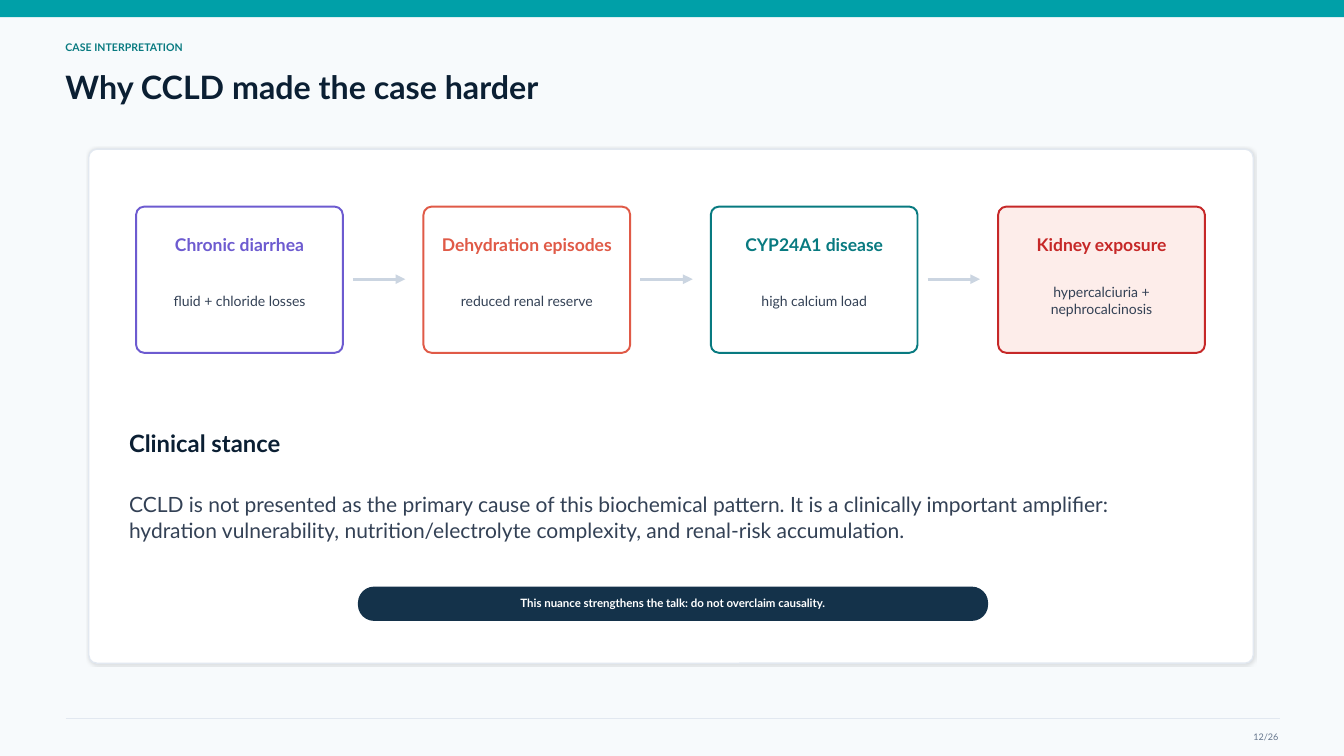
from dataclasses import dataclass

from lxml import etree
from pptx import Presentation
from pptx.dml.color import RGBColor
from pptx.enum.shapes import MSO_CONNECTOR, MSO_SHAPE
from pptx.enum.text import MSO_ANCHOR, PP_ALIGN
from pptx.oxml.ns import qn
from pptx.util import Emu, Pt

RECTANGLE = MSO_SHAPE.RECTANGLE
ROUNDED = MSO_SHAPE.ROUNDED_RECTANGLE
STRAIGHT = MSO_CONNECTOR.STRAIGHT
MIDDLE = MSO_ANCHOR.MIDDLE
LEFT, CENTER, RIGHT = PP_ALIGN.LEFT, PP_ALIGN.CENTER, PP_ALIGN.RIGHT
EMU_PER_PX = 9144  # 100 px to the inch


@dataclass(frozen=True)
class Theme:
    font: str = "Lato"
    # Colours
    background: str = "F7FAFC"
    bar: str = "00A0A8"
    teal: str = "087A80"
    ink: str = "0B1F33"
    body: str = "334155"
    muted: str = "64748B"
    rule: str = "E2E8F0"
    arrow: str = "CBD5E1"
    white: str = "FFFFFF"
    purple: str = "6D5BD0"
    coral: str = "E05A47"
    red: str = "C62828"
    blush: str = "FDEDEA"
    navy: str = "14324A"
    shadow: str = "000000"
    # Type sizes in points
    page_size: float = 6.5
    kicker_size: float = 7.5
    pill_size: float = 8.2
    detail_size: float = 10
    step_size: float = 12.5
    body_size: float = 15
    heading_size: float = 17
    title_size: float = 23


def px(value):
    return Emu(value * EMU_PER_PX)


def rgb(color):
    return RGBColor.from_string(color)


class SlideBuilder:
    def __init__(self, slide, theme):
        self.slide = slide
        self.theme = theme
        fill = slide.background.fill
        fill.solid()
        fill.fore_color.rgb = rgb(theme.background)

    def box(self, left, top, width, height, fill, line=None, line_width=1,
            radius=None, shadow=False):
        kind = RECTANGLE if radius is None else ROUNDED
        shape = self.slide.shapes.add_shape(
            kind, px(left), px(top), px(width), px(height))
        if radius is not None:
            shape.adjustments[0] = radius
        shape.fill.solid()
        shape.fill.fore_color.rgb = rgb(fill)
        if line:
            shape.line.color.rgb = rgb(line)
            shape.line.width = Pt(line_width)
        else:
            shape.line.fill.background()
        shape.shadow.inherit = False
        if shadow:
            self.add_shadow(shape)

    def add_shadow(self, shape):
        effects = shape.element.spPr.find(qn("a:effectLst"))
        outer = etree.SubElement(
            effects, qn("a:outerShdw"), blurRad=str(Pt(1.5)),
            dist=str(Pt(0.7)), dir=str(45 * 60000), algn="ctr", rotWithShape="0")
        color = etree.SubElement(outer, qn("a:srgbClr"), val=self.theme.shadow)
        etree.SubElement(color, qn("a:alpha"), val="12000")

    def text(self, left, top, width, height, words, size, color,
             bold=False, align=LEFT):
        shape = self.slide.shapes.add_textbox(
            px(left), px(top), px(width), px(height))
        frame = shape.text_frame
        frame.word_wrap = True
        frame.vertical_anchor = MIDDLE
        frame.margin_left = frame.margin_right = 0
        frame.margin_top = frame.margin_bottom = 0
        paragraph = frame.paragraphs[0]
        paragraph.alignment = align
        run = paragraph.add_run()
        run.text = words
        run.font.name = self.theme.font
        run.font.size = Pt(size)
        run.font.bold = bold
        run.font.color.rgb = rgb(color)

    def horizontal_line(self, left, right, y, color, width, arrow=False):
        connector = self.slide.shapes.add_connector(
            STRAIGHT, px(left), px(y), px(right), px(y))
        connector.line.color.rgb = rgb(color)
        connector.line.width = Pt(width)
        properties = connector.element.spPr
        if arrow:
            outline = properties.find(qn("a:ln"))
            etree.SubElement(outline, qn("a:tailEnd"), type="triangle")
        etree.SubElement(properties, qn("a:effectLst"))

    def step(self, left, title, detail, color, fill):
        theme = self.theme
        self.box(left, 205, 205, 145, fill, color, 1.4, radius=0.055)
        self.text(left + 10, 230, 185, 25, title, theme.step_size, color,
                  bold=True, align=CENTER)
        self.text(left + 15, 277, 175, 42, detail, theme.detail_size,
                  theme.body, align=CENTER)


def main():
    theme = Theme()
    presentation = Presentation()
    presentation.slide_width = px(1333)
    presentation.slide_height = px(750)
    slide = presentation.slides.add_slide(presentation.slide_layouts[6])
    builder = SlideBuilder(slide, theme)

    # Header
    builder.box(0, 0, 1333, 17, theme.bar)
    builder.text(65, 34, 260, 25, "CASE INTERPRETATION", theme.kicker_size,
                 theme.teal, bold=True)
    builder.text(65, 57, 1080, 58, "Why CCLD made the case harder",
                 theme.title_size, theme.ink, bold=True)

    # Footer
    builder.horizontal_line(65, 1270, 713, theme.rule, 1)
    builder.text(1208, 722, 60, 18, "12/26", theme.page_size, theme.muted,
                 align=RIGHT)

    # Card
    builder.box(88, 148, 1155, 510, theme.white, theme.rule, 1,
                radius=0.016, shadow=True)

    # Chain of steps
    steps = [
        ("Chronic diarrhea", "fluid + chloride losses", theme.purple, theme.white),
        ("Dehydration episodes", "reduced renal reserve", theme.coral, theme.white),
        ("CYP24A1 disease", "high calcium load", theme.teal, theme.white),
        ("Kidney exposure", "hypercalciuria + nephrocalcinosis", theme.red,
         theme.blush),
    ]
    for index, (title, detail, color, fill) in enumerate(steps):
        left = 135 + index * 285
        builder.step(left, title, detail, color, fill)
        if index < len(steps) - 1:
            builder.horizontal_line(left + 215, left + 267, 277, theme.arrow,
                                    2.3, arrow=True)

    # Clinical stance
    builder.text(128, 425, 220, 28, "Clinical stance", theme.heading_size,
                 theme.ink, bold=True)
    builder.text(
        128, 478, 1025, 70,
        "CCLD is not presented as the primary cause of this biochemical pattern. "
        "It is a clinically important amplifier: hydration vulnerability, "
        "nutrition/electrolyte complexity, and renal-risk accumulation.",
        theme.body_size, theme.body)

    # Takeaway pill
    builder.box(355, 582, 625, 34, theme.navy, radius=0.471)
    builder.text(363, 589, 609, 18,
                 "This nuance strengthens the talk: do not overclaim causality.",
                 theme.pill_size, theme.white, bold=True, align=CENTER)

    presentation.save("out.pptx")


if __name__ == "__main__":
    main()
